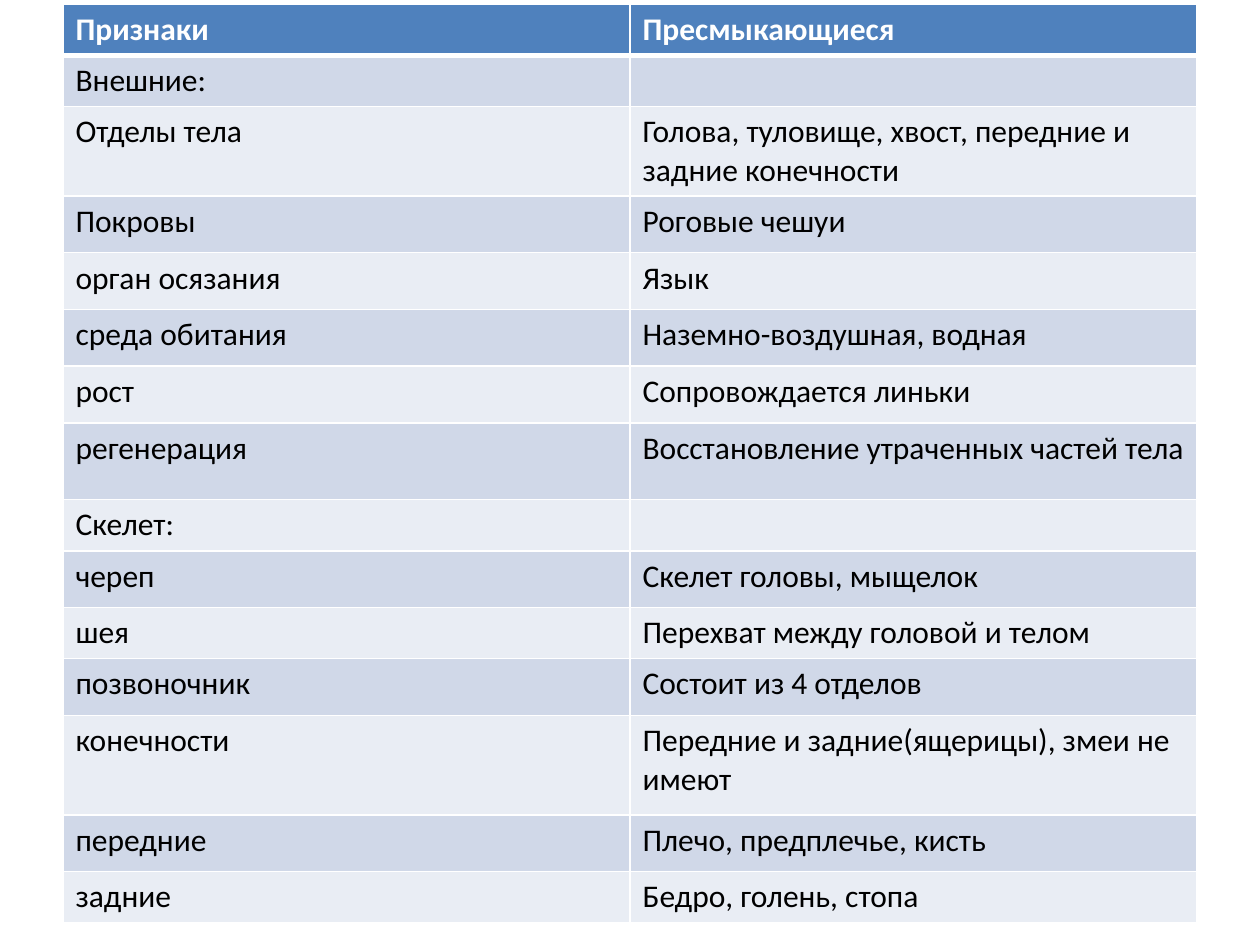
from pptx import Presentation
from pptx.dml.color import RGBColor
from pptx.oxml import parse_xml
from pptx.oxml.ns import nsdecls
from pptx.util import Inches, Pt

TRAITS = [
    ("Признаки", "Пресмыкающиеся", 0.41),
    ("Внешние:", "", 0.3),
    ("Отделы тела", "Голова, туловище, хвост, передние и задние конечности", 0.65),
    ("Покровы", "Роговые чешуи", 0.45),
    ("орган осязания", "Язык", 0.45),
    ("среда обитания", "Наземно-воздушная, водная", 0.45),
    ("рост", "Сопровождается линьки", 0.45),
    ("регенерация", "Восстановление утраченных частей тела", 0.61),
    ("Скелет:", "", 0.22),
    ("череп", "Скелет головы, мыщелок", 0.45),
    ("шея", "Перехват между головой и телом", 0.32),
    ("позвоночник", "Состоит из 4 отделов", 0.45),
    ("конечности", "Передние и задние(ящерицы), змеи не имеют", 0.79),
    ("передние", "Плечо, предплечье, кисть", 0.45),
    ("задние", "Бедро, голень, стопа", 0.3),
]
HEADER_FILL = "4F81BD"
BAND_FILLS = ["E9EDF4", "D0D8E8"]
WHITE, BLACK = "FFFFFF", "000000"


def color(value):
    return RGBColor.from_string(value)


def write(cell, text, size=18, font="Calibri", ink=BLACK, bold=False):
    if not text:
        return
    run = cell.text_frame.paragraphs[0].add_run()
    run.text = text
    run.font.size = Pt(size)
    run.font.name = font
    run.font.bold = bold
    run.font.color.rgb = color(ink)


def add_borders(cell, top=1, bottom=1):
    widths = {"lnL": 1, "lnR": 1, "lnT": top, "lnB": bottom}
    properties = cell._tc.get_or_add_tcPr()
    for position, (side, width) in enumerate(widths.items()):
        border = parse_xml(
            f'<a:{side} {nsdecls("a")} w="{Pt(width)}"><a:solidFill>'
            f'<a:srgbClr val="{WHITE}"/></a:solidFill></a:{side}>'
        )
        properties.insert(position, border)


def add_traits_table(slide, left, top, width, height):
    frame = slide.shapes.add_table(len(TRAITS), 2, left, top, width, height)
    table = frame.table
    for index, (trait, description, row_height) in enumerate(TRAITS):
        table.rows[index].height = Inches(row_height)
        header = index == 0
        for cell, text in zip(table.rows[index].cells, (trait, description)):
            cell.fill.solid()
            cell.fill.fore_color.rgb = color(HEADER_FILL if header else BAND_FILLS[index % 2])
            add_borders(cell, top=3 if index == 1 else 1, bottom=3 if header else 1)
            write(cell, text, ink=WHITE if header else BLACK, bold=header)
    frame.height = height


def main():
    deck = Presentation()
    deck.slide_width, deck.slide_height = Inches(10), Inches(7.5)
    slide = deck.slides.add_slide(deck.slide_layouts[6])
    add_traits_table(slide, Inches(0.5), Inches(0.03), Inches(9), Inches(7.35))
    deck.save("out.pptx")


if __name__ == "__main__":
    main()
